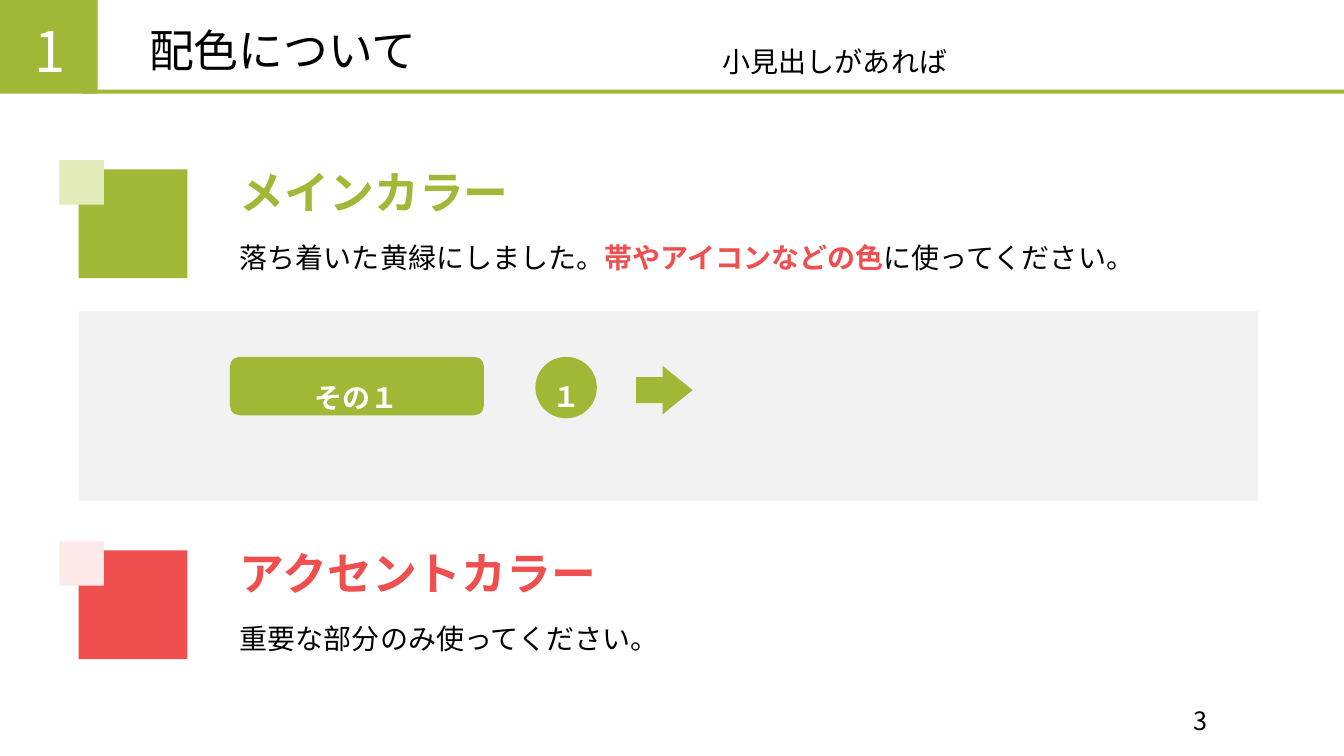
from lxml.etree import SubElement
from pptx import Presentation
from pptx.dml.color import RGBColor
from pptx.enum.shapes import MSO_SHAPE
from pptx.enum.text import PP_ALIGN
from pptx.oxml.ns import qn
from pptx.util import Inches, Pt

FONT = "Noto Sans CJK JP"
COLORS = {
    "green": "A1B837", "pale": "E3EBBB", "red": "EF4F4F", "pink": "FDE9E9",
    "grey": "F2F2F2", "black": "000000", "white": "FFFFFF",
}

deck = Presentation()
deck.slide_width, deck.slide_height = Inches(13.33), Inches(7.5)
slide = deck.slides.add_slide(deck.slide_layouts[6])


def add_block(parent, kind, spot, color):
    shape = parent.shapes.add_shape(kind, *map(Inches, spot))
    shape.shadow.inherit = False
    shape.fill.solid()
    shape.fill.fore_color.rgb = RGBColor.from_string(COLORS[color])
    shape.line.fill.background()
    return shape


def add_text(parent, spot, lines, align=PP_ALIGN.LEFT, wrap=True):
    """Each line is (size, line spacing, bold, [(text, color), ...])."""
    frame = parent.shapes.add_textbox(*map(Inches, spot)).text_frame
    frame.word_wrap = wrap
    for i, (size, space, bold, runs) in enumerate(lines):
        para = frame.add_paragraph() if i else frame.paragraphs[0]
        para.alignment = align
        if space:
            para.line_spacing = Pt(space)
        font = para.font
        font.name, font.size, font.bold = FONT, Pt(size), bold
        font.color.rgb = RGBColor.from_string(COLORS[runs[0][1]])
        base = para._p.pPr.find(qn("a:defRPr"))
        SubElement(base, qn("a:ea")).set("typeface", FONT)
        for text, color in runs:
            run = para.add_run()
            run.text = text
            if color != runs[0][1]:
                run.font.bold = True
                run.font.color.rgb = RGBColor.from_string(COLORS[color])


# Header band
add_block(slide, MSO_SHAPE.RECTANGLE, (0, 0, 0.97, 0.93), "green")
add_block(slide, MSO_SHAPE.RECTANGLE, (0.81, 0.89, 12.52, 0.04), "green")
add_text(slide, (1.38, 0.15, 4.06, 0.66),
         [(32, 40, False, [("配色について", "black")])])
add_text(slide, (0.22, 0.23, 0.55, 0.69),
         [(40, 40, False, [("1", "white")])], PP_ALIGN.CENTER, False)
add_text(slide, (7.07, 0.17, 4.06, 0.62),
         [(20, 40, False, [("小見出しがあれば", "black")])])

# Colour sections
sections = [
    (1.68, "green", "pale", "メインカラー",
     [("落ち着いた黄緑にしました。", "black"),
      ("帯やアイコンなどの色", "red"),
      ("に使ってください。", "black")]),
    (5.46, "red", "pink", "アクセントカラー",
     [("重要な部分のみ使ってください。", "black")]),
]
for top, main, tint, title, body in sections:
    add_block(slide, MSO_SHAPE.RECTANGLE, (0.78, top, 1.08, 1.08), main)
    add_block(slide, MSO_SHAPE.RECTANGLE, (0.59, top - 0.09, 0.44, 0.44), tint)
    add_text(slide, (2.28, top + 0.05, 9.45, 1.02),
             [(32, 28, True, [(title, main)]), (20, 40, False, body)])

# Sample panel with labelled badges and an arrow
add_block(slide, MSO_SHAPE.RECTANGLE, (0.78, 3.09, 11.7, 1.88), "grey")
badges = [
    (MSO_SHAPE.ROUNDED_RECTANGLE, 2.28, 2.52, 0.58, 3.5, "その１"),
    (MSO_SHAPE.OVAL, 5.31, 0.61, 0.61, 3.49, "１"),
]
for kind, left, width, height, top, label in badges:
    group = slide.shapes.add_group_shape()
    add_block(group, kind, (left, 3.54, width, height), "green")
    add_text(group, (left, top, width, 0.61),
             [(20, 40, True, [(label, "white")])], PP_ALIGN.CENTER)
arrow = add_block(slide, MSO_SHAPE.RIGHT_ARROW, (6.31, 3.63, 0.56, 0.48), "green")
arrow.adjustments[0], arrow.adjustments[1] = 0.54, 0.62

# Page number
add_text(slide, (11.74, 6.95, 0.68, 0.4), [(18, None, False, [("3", "black")])])

deck.save("out.pptx")
